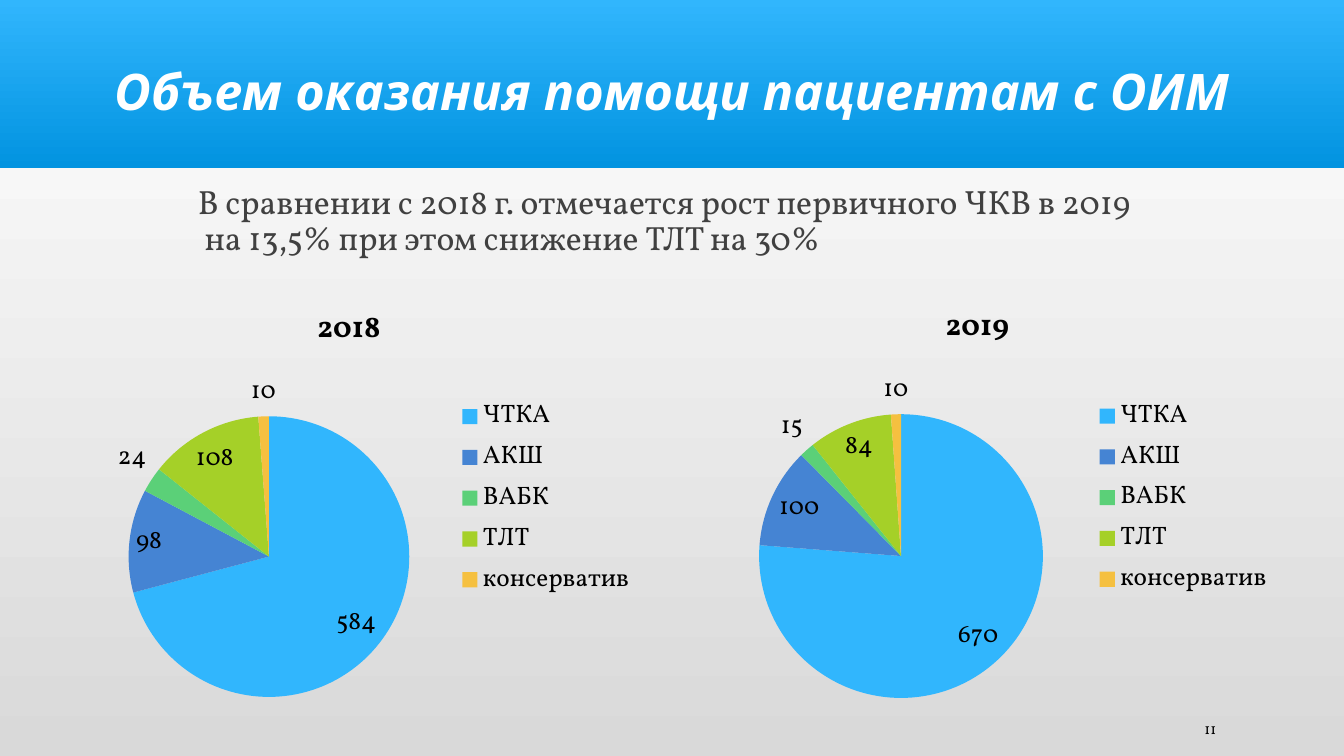
"""Build a slide comparing care volumes for 2018 and 2019 in two pie charts."""
from pptx import Presentation
from pptx import util as u
from pptx.chart import data
from pptx.dml import color
from pptx.enum import chart as ch, shapes, text

PX = 9525
FONT = "Vollkorn"
TREATMENTS = ["ЧТКА", "АКШ", "ВАБК", "ТЛТ", "консерватив"]
COLORS = ["31B6FD", "4584D3", "5BD078", "A5D028", "F5C040"]


def paint(fill, *hexes, angle=0):
    if len(hexes) == 1:
        fill.solid()
        fill.fore_color.rgb = color.RGBColor.from_string(hexes[0])
        return
    fill.gradient()
    fill.gradient_angle = angle
    for stop, value in zip(fill.gradient_stops, hexes):
        stop.color.rgb = color.RGBColor.from_string(value)


def style(font, size, value="000000", name=FONT, bold=False, italic=False):
    font.name, font.size, font.bold, font.italic = name, u.Pt(size), bold, italic
    paint(font.fill, value)


prs = Presentation()
prs.slide_width, prs.slide_height = 1280 * PX, 720 * PX
s = prs.slides.add_slide(prs.slide_layouts[6])
paint(s.background.fill, "D9D9D9", "FFFFFF", angle=90)

band = s.shapes.add_shape(shapes.MSO_SHAPE.RECTANGLE, 0, 0, 1280 * PX, 160 * PX)
band.shadow.inherit = False
band.line.fill.background()
paint(band.fill, "31B6FD", "0293E0", angle=270)

texts = [
    ("Объем оказания помощи пациентам с ОИМ", (0, 20, 1280, 139), text.PP_ALIGN.CENTER, 0.9,
     dict(size=36, value="FFFFFF", name="Open Sans", bold=True, italic=True)),
    ("В сравнении с 2018 г. отмечается рост первичного ЧКВ в 2019  на 13,5% при этом снижение ТЛТ на 30%",
     (179, 171, 907, 80), text.PP_ALIGN.LEFT, 0.9, dict(size=24, value="404040")),
    ("11", (1080, 681, 88, 25), text.PP_ALIGN.RIGHT, 1.0, dict(size=11)),
]
for words, box, align, spacing, look in texts:
    sp = s.shapes.add_textbox(*(n * PX for n in box))
    tf = sp.text_frame
    tf.word_wrap = True
    tf.vertical_anchor = text.MSO_ANCHOR.MIDDLE
    p = tf.paragraphs[0]
    p.text = words
    p.alignment = align
    p.line_spacing = spacing
    style(p.font, **look)

pies = [
    ("2018", [584, 98, 24, 108, 10], (50, 272, 565, 405)),
    ("2019", [670, 100, 15, 84, 10], (640, 270, 582, 408)),
]
for year, counts, box in pies:
    cd = data.CategoryChartData()
    cd.categories = TREATMENTS
    cd.add_series(year, counts)
    chart = s.shapes.add_chart(ch.XL_CHART_TYPE.PIE, *(n * PX for n in box), cd).chart
    style(chart.font, 18)

    chart.has_title = True
    p = chart.chart_title.text_frame.paragraphs[0]
    p.text = year
    style(p.font, 21.6, bold=True)
    chart.chart_title.include_in_layout = False

    chart.has_legend = True
    chart.legend.position = ch.XL_LEGEND_POSITION.RIGHT
    chart.legend.include_in_layout = False

    plot = chart.plots[0]
    plot.vary_by_categories = True
    plot.has_data_labels = True
    labels = plot.data_labels
    labels.show_value = True
    labels.show_percentage = False
    labels.position = ch.XL_LABEL_POSITION.BEST_FIT
    style(labels.font, 18)
    for i, value in enumerate(COLORS):
        paint(plot.series[0].points[i].format.fill, value)

prs.save("out.pptx")
